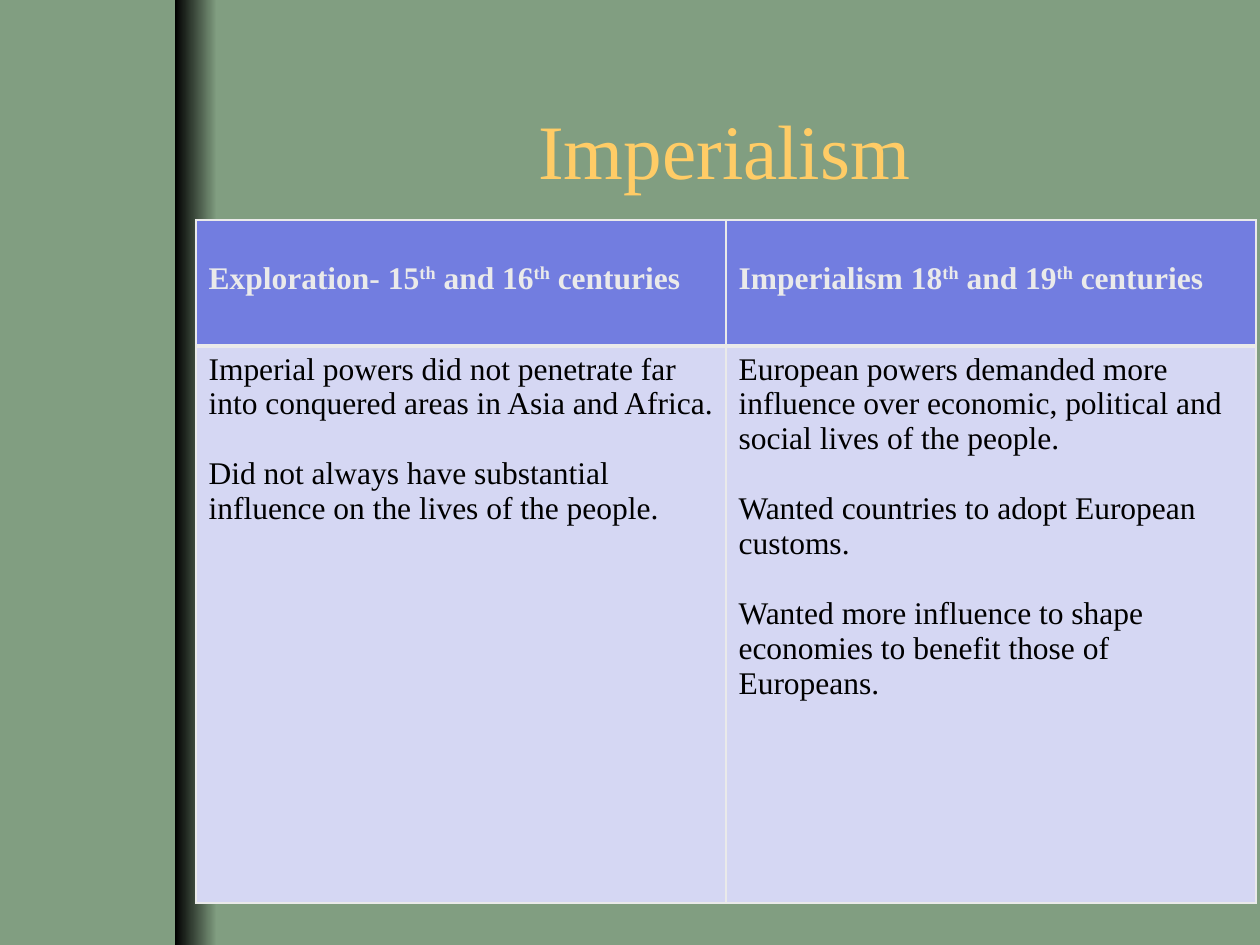
from dataclasses import dataclass

from lxml import etree
from pptx import Presentation
from pptx import util as u
from pptx.dml.color import RGBColor
from pptx.enum import shapes, text
from pptx.oxml import ns


@dataclass(frozen=True)
class Theme:
    font: str = "Times New Roman"
    background: str = "819E81"
    shadow: str = "000000"
    title: str = "FFCC66"
    header: str = "727DE0"
    body: str = "D5D7F3"
    light: str = "EAEAEA"
    ink: str = "000000"
    title_size: int = 44
    table_size: int = 18
    gap: int = 20
    thin: int = 1
    thick: int = 3


THEME = Theme()
SCALE = u.Inches(1) / 126


def px(*lengths):
    return [round(length * SCALE) for length in lengths]


def add_border(cell, side, points):
    properties = cell._tc.get_or_add_tcPr()
    line = etree.SubElement(properties, ns.qn(f"a:ln{side}"), w=str(u.Pt(points)))
    fill = etree.SubElement(line, ns.qn("a:solidFill"))
    etree.SubElement(fill, ns.qn("a:srgbClr"), val=THEME.light)


deck = Presentation()
deck.slide_width, deck.slide_height = px(1260, 945)
page = deck.slides.add_slide(deck.slide_layouts[5])
page.background.fill.solid()
page.background.fill.fore_color.rgb = RGBColor.from_string(THEME.background)

strip = page.shapes.add_shape(shapes.MSO_SHAPE.RECTANGLE, *px(175, 0, 42, 945))
strip.shadow.inherit = False
strip.line.fill.background()
strip.fill.gradient()
strip.fill.gradient_angle = 0
for stop, position, colour in zip(
    strip.fill.gradient_stops, (0, 1), (THEME.shadow, THEME.background)
):
    stop.position = position
    stop.color.rgb = RGBColor.from_string(colour)
page.shapes._spTree.insert(2, strip._element)

title = page.shapes.title
title.left, title.top, title.width, title.height = px(189, 73, 1071, 151)
title.text_frame.text = "Imperialism"
title.text_frame.vertical_anchor = text.MSO_ANCHOR.MIDDLE
para = title.text_frame.paragraphs[0]
para.alignment = text.PP_ALIGN.CENTER
para.font.name = THEME.font
para.font.size = u.Pt(THEME.title_size)
para.font.color.rgb = RGBColor.from_string(THEME.title)

rows = [
    [
        [["Exploration- 15", "th", " and 16", "th", " centuries"]],
        [["Imperialism 18", "th", " and 19", "th", " centuries"]],
    ],
    [
        [
            ["Imperial powers did not penetrate far into conquered areas in Asia and Africa."],
            ["Did not always have substantial influence on the lives of the people."],
        ],
        [
            ["European powers demanded more influence over economic, political and social lives of the people."],
            ["Wanted countries to adopt European customs."],
            ["Wanted more influence to shape economies to benefit those of Europeans."],
        ],
    ],
]

table = page.shapes.add_table(2, 2, *px(196, 220, 1060, 683)).table
table.first_row = False
table.horz_banding = False
for column in table.columns:
    column.width = px(530)[0]
for row, height in zip(table.rows, px(126, 557)):
    row.height = height

for row_index, contents in enumerate(rows):
    is_header = row_index == 0
    fill_colour = THEME.header if is_header else THEME.body
    text_colour = THEME.light if is_header else THEME.ink
    shared_side = "B" if is_header else "T"
    for column_index, paragraphs in enumerate(contents):
        cell = table.cell(row_index, column_index)
        for side in "LRTB":
            add_border(cell, side, THEME.thick if side == shared_side else THEME.thin)
        cell.fill.solid()
        cell.fill.fore_color.rgb = RGBColor.from_string(fill_colour)
        cell.margin_top = px(41 if is_header else 6)[0]
        for index, pieces in enumerate(paragraphs):
            box = cell.text_frame
            para = box.add_paragraph() if index else box.paragraphs[0]
            if index:
                para.space_before = u.Pt(THEME.gap)
            para.font.name = THEME.font
            para.font.size = u.Pt(THEME.table_size)
            para.font.bold = is_header
            para.font.color.rgb = RGBColor.from_string(text_colour)
            for piece in pieces:
                span = para.add_run()
                span.text = piece
                if piece == "th":
                    span._r.get_or_add_rPr().set("baseline", "30000")

deck.save("out.pptx")
